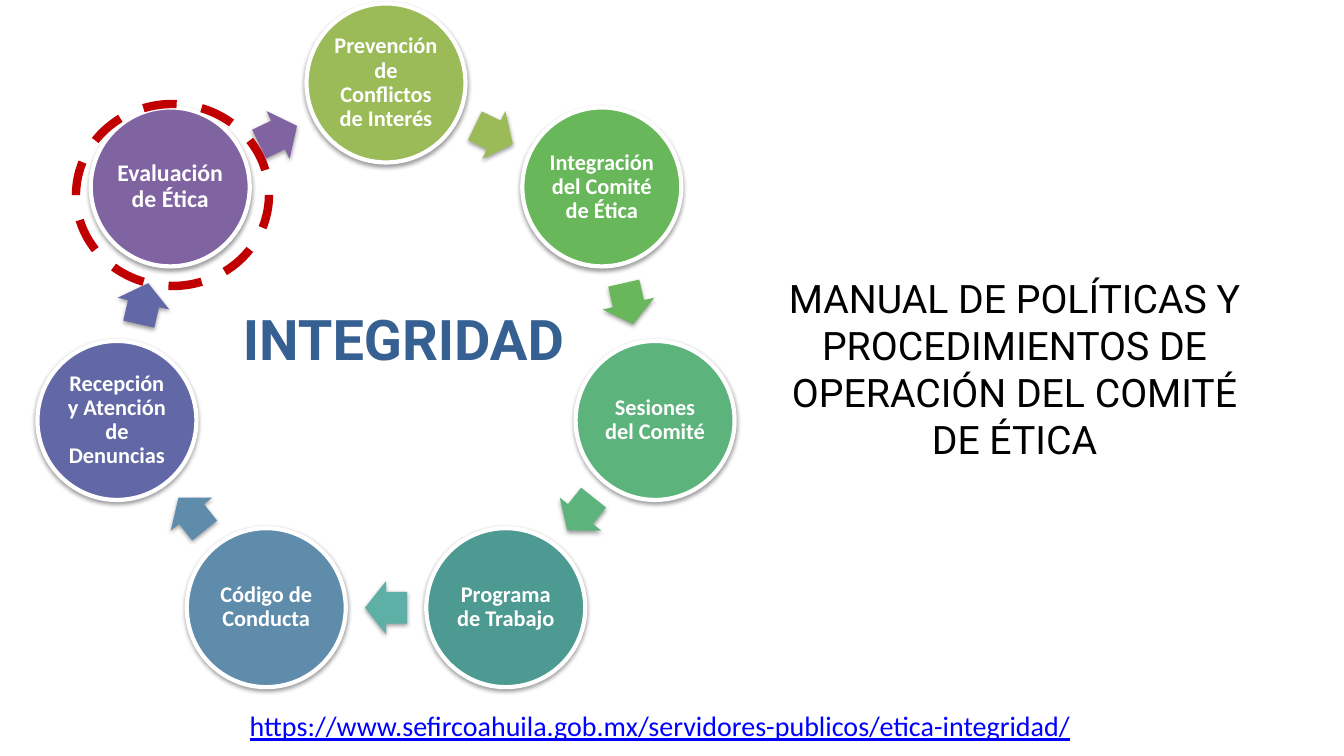
from math import cos, radians, sin

from lxml.etree import SubElement
from pptx import Presentation
from pptx.dml.color import RGBColor
from pptx.enum.dml import MSO_LINE
from pptx.enum.shapes import MSO_SHAPE
from pptx.enum.text import MSO_ANCHOR, PP_ALIGN
from pptx.oxml.ns import qn
from pptx.util import Emu, Pt

COLORS = {
    "white": "FFFFFF", "black": "000000", "red": "C00000",
    "title": "376092", "link": "0000FF", "teal_arrow": "5EAFA6",
    "olive": "9BBB59", "green": "69B75B", "mint": "5CB37C", "teal": "4C9A91",
    "steel": "608CAB", "indigo": "6267A6", "purple": "8064A2",
}
RGB = {name: RGBColor.from_string(value) for name, value in COLORS.items()}
PX = 12192000 / 1344  # EMU in one px


def add_part(kind, left, top, width, height, fill=None, shadow=False):
    box = [Emu(round(length * PX)) for length in (left, top, width, height)]
    shape = slide.shapes.add_shape(kind, *box)
    if fill:
        shape.fill.solid()
        shape.fill.fore_color.rgb = RGB[fill]
    else:
        shape.fill.background()
    shape.line.fill.background()
    shape.shadow.inherit = False
    if shadow:
        effects = shape._element.spPr.find(qn("a:effectLst"))
        outer = SubElement(effects, qn("a:outerShdw"), blurRad="40000",
                           dist="20000", dir="5400000", rotWithShape="0")
        color = SubElement(outer, qn("a:srgbClr"), val=COLORS["black"])
        SubElement(color, qn("a:alpha"), val="38000")
    return shape


def write(shape, text, font, size, color, bold=False, align=PP_ALIGN.CENTER):
    shape.text_frame.text = text
    paragraph = shape.text_frame.paragraphs[0]
    paragraph.alignment = align
    paragraph.font.name = font
    paragraph.font.size = Pt(size)
    paragraph.font.bold = bold
    paragraph.font.color.rgb = RGB[color]
    return paragraph


presentation = Presentation()
presentation.slide_width = Emu(12192000)
presentation.slide_height = Emu(6858000)
slide = presentation.slides.add_slide(presentation.slide_layouts[6])

# Cycle: circles on a ring, each followed by an arrow to the next
CENTER_X, CENTER_Y, RADIUS = 386, 359, 276
DIAMETER, ARROW_WIDTH, ARROW_HEIGHT = 159, 42, 53
STEPS = [
    ("Prevención de Conflictos de Interés", "olive", "olive", 16),
    ("Integración del Comité de Ética", "green", "green", 16),
    ("Sesiones del Comité", "mint", "mint", 16),
    ("Programa de Trabajo", "teal", "teal_arrow", 16),
    ("Código de Conducta", "steel", "steel", 16),
    ("Recepción y Atención de Denuncias", "indigo", "indigo", 16),
    ("Evaluación de Ética", "purple", "purple", 17),
]
turn = 360 / len(STEPS)
arrow_radius = RADIUS * cos(radians(turn / 2))
for index, (text, fill, arrow_fill, size) in enumerate(STEPS):
    angle = radians(index * turn)
    x = CENTER_X + RADIUS * sin(angle)
    y = CENTER_Y - RADIUS * cos(angle)
    circle = add_part(MSO_SHAPE.OVAL, x - DIAMETER / 2, y - DIAMETER / 2,
                      DIAMETER, DIAMETER, fill, shadow=True)
    circle.line.color.rgb = RGB["white"]
    circle.line.width = Pt(3)
    frame = circle.text_frame
    frame.word_wrap = True
    frame.vertical_anchor = MSO_ANCHOR.MIDDLE
    frame.margin_left = frame.margin_right = Emu(round(3 * PX))
    frame.margin_top = frame.margin_bottom = Emu(round(2 * PX))
    write(circle, text, "Calibri", size, "white", bold=True).line_spacing = 0.9

    arrow_turn = (index + 0.5) * turn
    x = CENTER_X + arrow_radius * sin(radians(arrow_turn))
    y = CENTER_Y - arrow_radius * cos(radians(arrow_turn))
    arrow = add_part(MSO_SHAPE.RIGHT_ARROW, x - ARROW_WIDTH / 2,
                     y - ARROW_HEIGHT / 2, ARROW_WIDTH, ARROW_HEIGHT,
                     arrow_fill, shadow=True)
    arrow.adjustments[0] = 0.6
    arrow.adjustments[1] = 0.5
    arrow.rotation = arrow_turn

# Manual name, ring title and web address
manual = add_part(MSO_SHAPE.RECTANGLE, 754, 269, 521, 201)
manual.text_frame.word_wrap = True
manual.text_frame.vertical_anchor = MSO_ANCHOR.TOP
write(manual, "MANUAL DE POLÍTICAS Y PROCEDIMIENTOS DE OPERACIÓN DEL COMITÉ "
      "DE ÉTICA", "Roboto", 28, "black")

title = add_part(MSO_SHAPE.RECTANGLE, 233, 300, 354, 78)
title.text_frame.word_wrap = False
title.text_frame.vertical_anchor = MSO_ANCHOR.TOP
write(title, "INTEGRIDAD", "Roboto", 40, "title", bold=True,
      align=PP_ALIGN.LEFT)

address = add_part(MSO_SHAPE.RECTANGLE, 126, 704, 1068, 44, "white")
address.text_frame.word_wrap = True
address.text_frame.vertical_anchor = MSO_ANCHOR.TOP
write(address, "https://www.sefircoahuila.gob.mx/servidores-publicos/"
      "etica-integridad/", "Calibri", 20, "link").font.underline = True

# Dashed ring around the current step
highlight = add_part(MSO_SHAPE.OVAL, 76, 104, 193, 182)
highlight.line.color.rgb = RGB["red"]
highlight.line.width = Pt(6)
highlight.line.dash_style = MSO_LINE.DASH

presentation.save("out.pptx")
